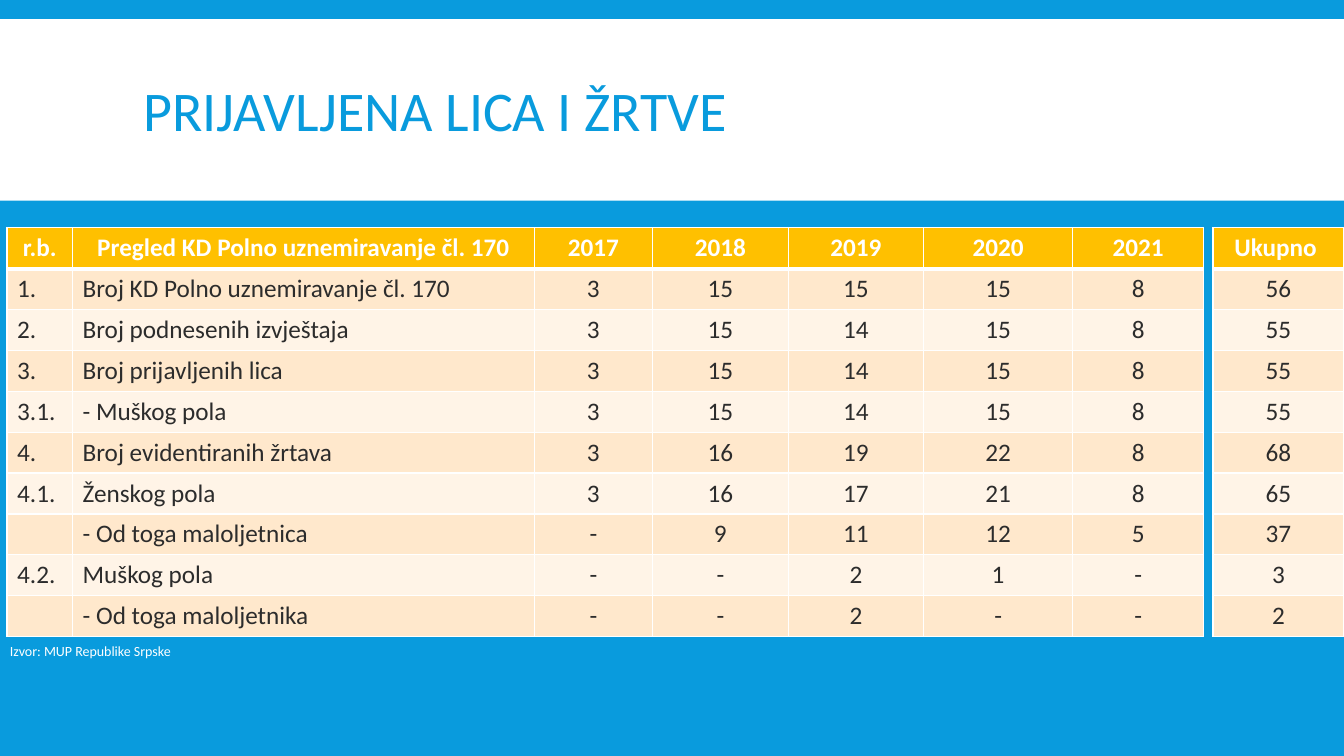
from lxml.etree import SubElement
from pptx import Presentation
from pptx.dml.color import RGBColor
from pptx.enum.shapes import MSO_SHAPE as SHAPE
from pptx.enum.text import MSO_ANCHOR as ANCHOR, PP_ALIGN as ALIGN
from pptx.oxml.ns import qn
from pptx.util import Inches, Pt

BLUE = RGBColor(0x09, 0x9B, 0xDD)
WHITE = RGBColor(0xFF, 0xFF, 0xFF)
AMBER = RGBColor(0xFF, 0xC0, 0x00)
PEACH = RGBColor(0xFF, 0xE8, 0xCC)
CREAM = RGBColor(0xFF, 0xF4, 0xE7)
DARK = RGBColor(0x2C, 0x2C, 0x2C)

WIDTHS = [0.65, 4.58, 1.17, 1.35, 1.34, 1.48, 1.3]
ROWS = [
    ["r.b.", "Pregled KD Polno uznemiravanje čl. 170", "2017", "2018", "2019", "2020", "2021"],
    ["1.", "Broj KD Polno uznemiravanje čl. 170", "3", "15", "15", "15", "8"],
    ["2.", "Broj podnesenih izvještaja", "3", "15", "14", "15", "8"],
    ["3.", "Broj prijavljenih lica", "3", "15", "14", "15", "8"],
    ["3.1.", "- Muškog pola", "3", "15", "14", "15", "8"],
    ["4.", "Broj evidentiranih žrtava", "3", "16", "19", "22", "8"],
    ["4.1.", "Ženskog pola", "3", "16", "17", "21", "8"],
    ["", "- Od toga maloljetnica", "-", "9", "11", "12", "5"],
    ["4.2.", "Muškog pola", "-", "-", "2", "1", "-"],
    ["", "- Od toga maloljetnika", "-", "-", "2", "-", "-"],
]
TOTALS = [[t] for t in ["Ukupno ", "56", "55", "55", "55", "68", "65", "37", "3", "2"]]


def write(tf, text, size=18, color=DARK, bold=False, align=ALIGN.LEFT, spacing=None):
    """Put one formatted paragraph into a text frame."""
    p = tf.paragraphs[0]
    p.alignment = align
    p.line_spacing = spacing
    r = p.add_run()
    r.text = text
    r.font.name = "Calibri"
    r.font.size = Pt(size)
    r.font.bold = bold
    r.font.color.rgb = color


def set_borders(cell, bottom):
    """Give a cell white borders, with its own bottom width in points."""
    tc_pr = cell._tc.get_or_add_tcPr()
    for i, (side, width) in enumerate([("L", 1), ("R", 1), ("T", 1), ("B", bottom)]):
        ln = SubElement(tc_pr, qn(f"a:ln{side}"), w=str(Pt(width)))
        fill = SubElement(ln, qn("a:solidFill"))
        SubElement(fill, qn("a:srgbClr"), val=str(WHITE))
        tc_pr.insert(i, ln)


def add_header(s, x, y, w, h):
    """Draw the white band and the title inside it."""
    band = s.shapes.add_shape(SHAPE.RECTANGLE, Inches(x), Inches(y), Inches(w), Inches(h))
    band.shadow.inherit = False
    band.fill.solid()
    band.fill.fore_color.rgb = WHITE
    band.line.fill.background()
    s.shapes._spTree.insert(2, band._element)
    title = s.shapes.title
    title.left, title.top = Inches(x + 1.32), Inches(y + 0.12)
    title.width, title.height = Inches(10.7), Inches(1.65)
    title.text_frame.vertical_anchor = ANCHOR.MIDDLE
    write(title.text_frame, "PRIJAVLJENA LICA I ŽRTVE", size=40, color=BLUE, spacing=0.85)


def add_grid(s, x, y, h, widths, rows, left_cols=0):
    """Draw a banded table whose first left_cols columns are left-aligned."""
    frame = s.shapes.add_table(len(rows), len(widths), Inches(x), Inches(y),
                               Inches(sum(widths)), Inches(h))
    table = frame.table
    for col, width in zip(table.columns, widths):
        col.width = Inches(width)
    for i, row in enumerate(rows):
        head = i == 0
        for j, text in enumerate(row):
            cell = table.cell(i, j)
            cell.fill.solid()
            cell.fill.fore_color.rgb = AMBER if head else PEACH if i % 2 else CREAM
            set_borders(cell, bottom=3 if head else 1)
            write(cell.text_frame, text, color=WHITE if head else DARK, bold=head,
                  align=ALIGN.CENTER if head or j >= left_cols else ALIGN.LEFT)


def add_source(s, x, y, w, h):
    """Write the source line below the tables."""
    tf = s.shapes.add_textbox(Inches(x), Inches(y), Inches(w), Inches(h)).text_frame
    tf.word_wrap = False
    write(tf, "Izvor: MUP Republike Srpske", size=10, color=WHITE)


def main():
    """Build the slide and save it."""
    prs = Presentation()
    prs.slide_width, prs.slide_height = Inches(13.33), Inches(7.5)
    s = prs.slides.add_slide(prs.slide_layouts[5])
    s.background.fill.solid()
    s.background.fill.fore_color.rgb = BLUE
    add_header(s, 0, 0.19, 13.33, 1.8)
    add_grid(s, 0.07, 2.26, 4.04, WIDTHS, ROWS, left_cols=2)
    add_grid(s, 12.03, 2.26, 4.04, [1.3], TOTALS)
    add_source(s, 0, 6.33, 1.87, 0.27)
    prs.save("out.pptx")


if __name__ == "__main__":
    main()
